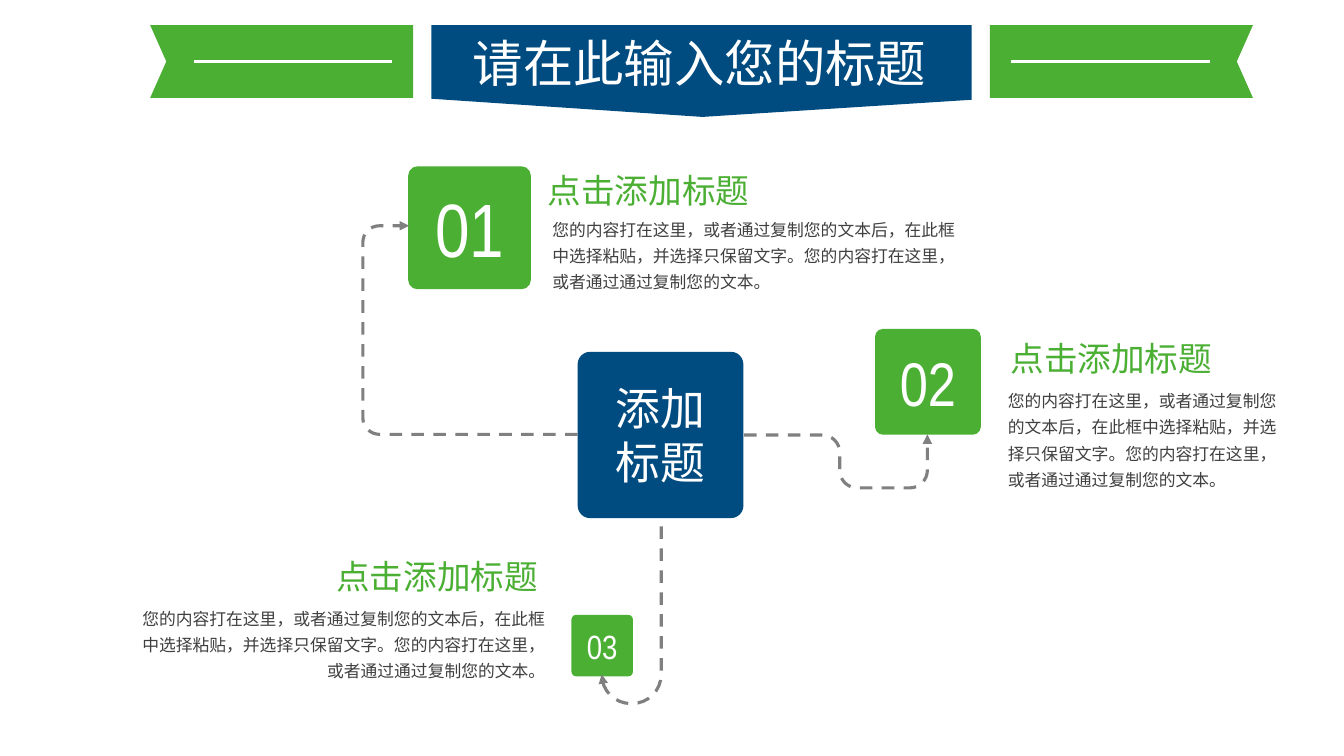
import math
from dataclasses import dataclass

import lxml.etree
import pptx
import pptx.dml.color
import pptx.enum.dml
import pptx.enum.shapes
import pptx.enum.text
import pptx.oxml.ns
import pptx.util

Pt = pptx.util.Pt
Align = pptx.enum.text.PP_ALIGN
Point = tuple[float, float]
Box = tuple[float, float, float, float]

BLUE, GREEN, GREY, DARK, WHITE = "004C80", "4BAF33", "808080", "404040", "FFFFFF"
CJK, NARROW = "Noto Sans CJK SC", "Arial Narrow"
HEADING = "点击添加标题"
BODY = ("您的内容打在这里，或者通过复制您的文本后，在此框中选择粘贴，并选择只保留文字。"
        "您的内容打在这里，或者通过通过复制您的文本。")
MIRROR_SUM = 1002.24
ARC_STEPS = 8


@dataclass(frozen=True)
class TextStyle:
    size: float
    color: str
    font: str = CJK
    align: Align = Align.LEFT
    spacing: float = 1.0


@dataclass(frozen=True)
class Step:
    number: str
    number_size: float
    badge: Box
    heading: Box
    body: Box
    body_align: Align
    route: list[Point]
    radius: float
    arrow_end: str


STEPS = [
    Step("01", 54, (291.6, 118.8, 87.6, 87.8), (383, 107.3, 160.6, 38.2),
         (387.4, 149, 313.9, 64.1), Align.LEFT,
         [(412.6, 310.3), (259.2, 310.3), (259.2, 161.3), (292.3, 161.3)],
         11.9, "tailEnd"),
    Step("02", 44, (625, 234.9, 75.6, 75.6), (705.6, 226.8, 176.4, 38.2),
         (712.8, 271.4, 209.5, 82.8), Align.LEFT,
         [(531.4, 310.7), (599.8, 310.7), (599.8, 348.5), (662.4, 348.5), (662.4, 310.3)],
         12.5, "tailEnd"),
    Step("03", 24, (408.2, 439.2, 43.9, 43.9), (221.8, 383, 180.7, 38.2),
         (82.8, 427, 313.9, 64.1), Align.RIGHT,
         [(429.8, 481.7), (429.8, 502.6), (472.3, 502.6), (472.3, 370.1)],
         20.8, "headEnd"),
]


def rgb(value: str) -> pptx.dml.color.RGBColor:
    return pptx.dml.color.RGBColor.from_string(value)


def set_all(target, values: dict) -> None:
    for name, value in values.items():
        setattr(target, name, value)


def add_tag(parent, tag: str, **attributes: str) -> None:
    lxml.etree.SubElement(parent, pptx.oxml.ns.qn(tag), attributes)


def fill_shape(shape, color: str) -> None:
    shape.shadow.inherit = False
    shape.fill.solid()
    shape.fill.fore_color.rgb = rgb(color)
    shape.line.fill.background()


def write_text(frame, lines: list[str], style: TextStyle, frame_values: dict) -> None:
    set_all(frame, frame_values)
    for index, line in enumerate(lines):
        paragraph = frame.add_paragraph() if index else frame.paragraphs[0]
        set_all(paragraph, {"alignment": style.align, "line_spacing": style.spacing})
        run = paragraph.add_run()
        run.text = line
        set_all(run.font, {"size": Pt(style.size), "name": style.font})
        run.font.color.rgb = rgb(style.color)
        add_tag(run.font._element, "a:ea", typeface=style.font)


def add_text(slide, box: Box, text: str, style: TextStyle, **frame_values) -> None:
    frame = slide.shapes.add_textbox(*map(Pt, box)).text_frame
    grow = pptx.enum.text.MSO_AUTO_SIZE.SHAPE_TO_FIT_TEXT
    write_text(frame, [text], style, {"word_wrap": True, "auto_size": grow, **frame_values})


def add_outline(slide, points: list[Point], close: bool):
    corners = [(Pt(x), Pt(y)) for x, y in points]
    builder = slide.shapes.build_freeform(*corners[0], scale=1.0)
    builder.add_line_segments(corners[1:], close=close)
    return builder.convert_to_shape()


def add_tile(slide, box: Box, color: str, lines: list[str], style: TextStyle) -> None:
    kind = pptx.enum.shapes.MSO_SHAPE.ROUNDED_RECTANGLE
    tile = slide.shapes.add_shape(kind, *map(Pt, box))
    tile.adjustments[0] = 0.075
    fill_shape(tile, color)
    write_text(tile.text_frame, lines, style, {
        "word_wrap": True, "margin_left": 0, "margin_right": 0,
        "vertical_anchor": pptx.enum.text.MSO_ANCHOR.MIDDLE})


def toward(start: Point, end: Point, length: float) -> Point:
    scale = length / math.dist(start, end)
    return (end[0] - start[0]) * scale, (end[1] - start[1]) * scale


def round_corners(route: list[Point], radius: float) -> list[Point]:
    points = [route[0]]
    for before, corner, after in zip(route, route[1:], route[2:]):
        back, ahead = toward(corner, before, radius), toward(corner, after, radius)
        for step in range(ARC_STEPS + 1):
            angle = math.pi / 2 * step / ARC_STEPS
            back_share, ahead_share = 1 - math.sin(angle), 1 - math.cos(angle)
            points.append((corner[0] + back[0] * back_share + ahead[0] * ahead_share,
                           corner[1] + back[1] * back_share + ahead[1] * ahead_share))
    return points + [route[-1]]


def add_route(slide, step: Step) -> None:
    route = add_outline(slide, round_corners(step.route, step.radius), close=False)
    route.shadow.inherit = False
    route.fill.background()
    set_all(route.line, {"width": Pt(2.25),
                         "dash_style": pptx.enum.dml.MSO_LINE_DASH_STYLE.DASH})
    route.line.color.rgb = rgb(GREY)
    add_tag(route.line._ln, f"a:{step.arrow_end}", type="triangle")


def add_ribbon(slide, mirrored: bool) -> None:
    def place(x: float) -> float:
        return MIRROR_SUM - x if mirrored else x

    outline = [(295.2, 18), (107.28, 18), (118.8, 43.92), (107.28, 69.84), (295.2, 69.84)]
    fill_shape(add_outline(slide, [(place(x), y) for x, y in outline], close=True), GREEN)
    stripe = slide.shapes.add_connector(
        pptx.enum.shapes.MSO_CONNECTOR.STRAIGHT,
        Pt(place(138.24)), Pt(43.92), Pt(place(280.08)), Pt(43.92))
    stripe.line.width = Pt(1.75)
    stripe.line.color.rgb = rgb(WHITE)
    add_tag(stripe._element.spPr, "a:effectLst")


def add_step(slide, step: Step) -> None:
    add_tile(slide, step.badge, GREEN, [step.number],
             TextStyle(step.number_size, WHITE, NARROW, Align.CENTER))
    add_route(slide, step)
    add_text(slide, step.body, BODY, TextStyle(12, DARK, align=step.body_align, spacing=1.3))
    add_text(slide, step.heading, HEADING,
             TextStyle(24, GREEN, align=Align.CENTER, spacing=1.5),
             margin_top=0, margin_bottom=0)


def main() -> None:
    deck = pptx.Presentation()
    set_all(deck, {"slide_width": Pt(960), "slide_height": Pt(540)})
    slide = deck.slides.add_slide(deck.slide_layouts[6])

    banner = [(308.16, 18), (694.08, 18), (694.08, 71.28), (501.84, 83.52), (308.16, 70.56)]
    fill_shape(add_outline(slide, banner, close=True), BLUE)
    add_text(slide, (330.5, 19.4, 342, 51.1), "请在此输入您的标题",
             TextStyle(36, WHITE), word_wrap=False)
    for mirrored in (False, True):
        add_ribbon(slide, mirrored)

    add_tile(slide, (412.6, 251.3, 118.4, 118.8), BLUE, ["添加", "标题"],
             TextStyle(32, WHITE, align=Align.CENTER))
    for step in STEPS:
        add_step(slide, step)
    deck.save("out.pptx")


if __name__ == "__main__":
    main()
